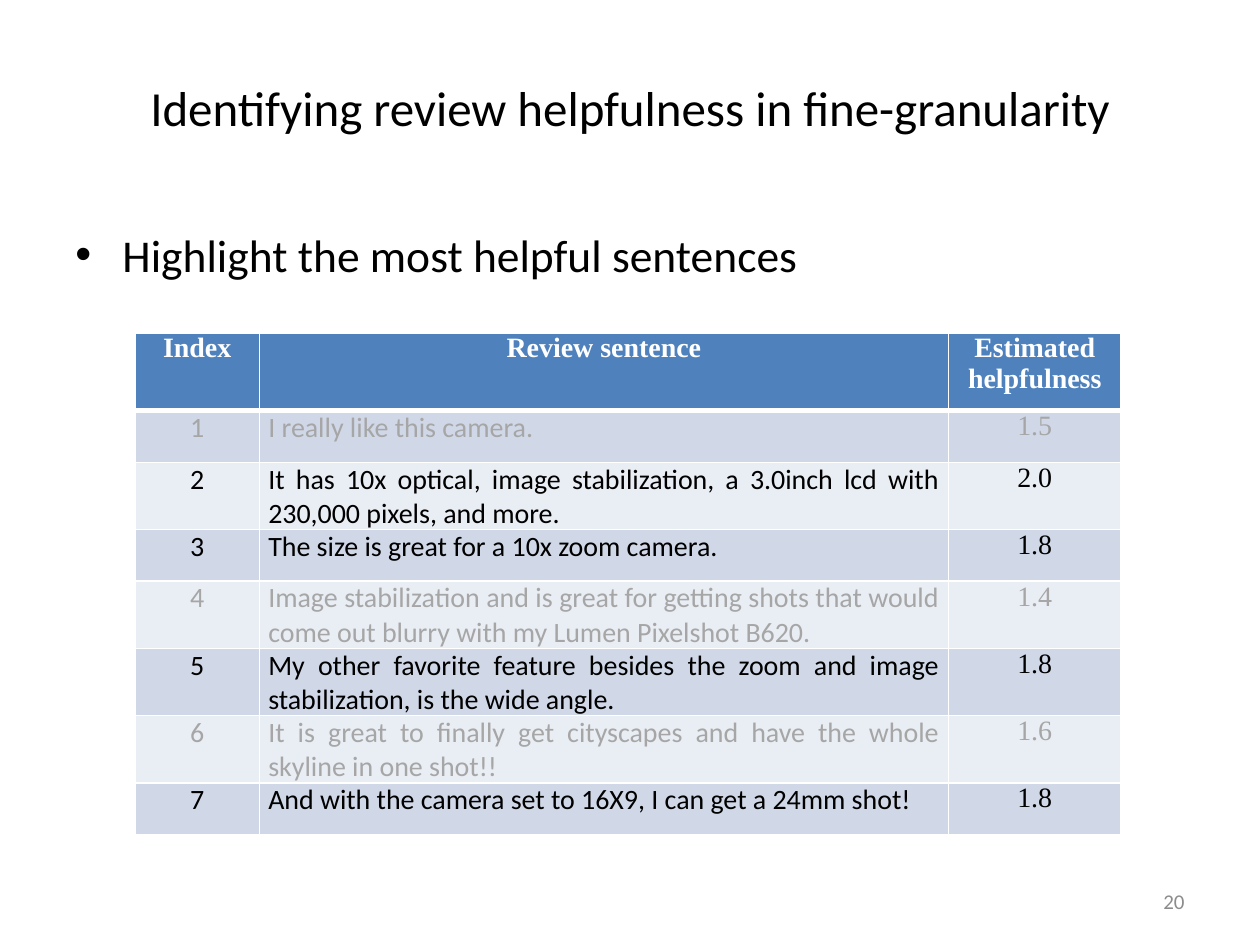
from lxml.etree import SubElement
from pptx import Presentation
from pptx.dml.color import RGBColor
from pptx.enum.text import MSO_ANCHOR, PP_ALIGN
from pptx.oxml.ns import qn
from pptx.util import Cm, Pt

# Content
TITLE = "Identifying review helpfulness in fine-granularity"
BULLET = "Highlight the most helpful sentences"
PAGE_NUMBER = "20"
HEADER = ("Index", "Review sentence", "Estimated helpfulness")
REVIEWS = [  # sentence, estimated helpfulness
    ("I really like this camera.", 1.5),
    ("It has 10x optical, image stabilization, a 3.0inch lcd with "
     "230,000 pixels, and more.", 2.0),
    ("The size is great for a 10x zoom camera.", 1.8),
    ("Image stabilization and is great for getting shots that would come out "
     "blurry with my Lumen Pixelshot B620.", 1.4),
    ("My other favorite feature besides the zoom and image stabilization, "
     "is the wide angle.", 1.8),
    ("It is great to finally get cityscapes and have the whole skyline "
     "in one shot!!", 1.6),
    ("And with the camera set to 16X9, I can get a 24mm shot!", 1.8),
]
HELPFUL_FROM = 1.8  # sentences below this score are dimmed

THEME = {
    "sans": "Calibri", "serif": "Times New Roman",
    "text": "000000", "dim": "A6A6A6", "page": "8C8C8C", "white": "FFFFFF",
    "header": "4F81BD", "bands": ("D0D8E8", "E9EDF4"),
    "title_size": 28, "bullet_size": 26, "table_size": 16, "page_size": 12,
    "thin": 1, "thick": 3,
}

# Geometry in centimetres
TABLE_LEFT, TABLE_TOP = 2.72, 6.71
COLUMN_WIDTHS = (2.51, 13.89, 3.48)
HEADER_HEIGHT, SHORT_ROW, TALL_ROW = 1.57, 1.04, 1.35
TALL_ROWS = {2, 4, 5, 6}


def write(text_frame, text, size, color, font=THEME["sans"],
          align=PP_ALIGN.LEFT, bold=False):
    text_frame.text = text
    paragraph = text_frame.paragraphs[0]
    paragraph.alignment = align
    style = paragraph.runs[0].font
    style.name, style.size, style.bold = font, Pt(size), bold
    style.color.rgb = RGBColor.from_string(color)
    return paragraph


def add_text(slide, box, text, size, color, align, anchor):
    text_frame = slide.shapes.add_textbox(*map(Cm, box)).text_frame
    text_frame.word_wrap = True
    text_frame.vertical_anchor = anchor
    return write(text_frame, text, size, color, align=align)


def add_bullet(paragraph, indent):
    paragraph.space_before = Pt(5.2)
    properties = paragraph._p.get_or_add_pPr()
    properties.set("marL", str(Cm(indent)))
    properties.set("indent", str(-Cm(indent)))
    SubElement(properties, qn("a:buFont"), typeface="Arial")
    SubElement(properties, qn("a:buChar"), char="•")


def set_borders(cell, top, bottom):
    properties = cell._tc.get_or_add_tcPr()
    thin = THEME["thin"]
    for side, width in (("L", thin), ("R", thin), ("T", top), ("B", bottom)):
        line = SubElement(properties, qn(f"a:ln{side}"), w=str(Pt(width)))
        fill = SubElement(line, qn("a:solidFill"))
        SubElement(fill, qn("a:srgbClr"), val=THEME["white"])


def fill_cell(cell, row, column, text, color):
    is_header = row == 0
    cell.margin_left = cell.margin_right = Cm(0.18)
    cell.margin_top = cell.margin_bottom = 0
    serif = is_header or column == 2
    justified = column == 1 and not is_header
    write(cell.text_frame, text, THEME["table_size"], color,
          THEME["serif"] if serif else THEME["sans"],
          PP_ALIGN.JUSTIFY if justified else PP_ALIGN.CENTER, is_header)
    set_borders(cell, THEME["thick"] if row == 1 else THEME["thin"],
                THEME["thick"] if is_header else THEME["thin"])
    background = THEME["header"] if is_header else THEME["bands"][(row - 1) % 2]
    cell.fill.solid()
    cell.fill.fore_color.rgb = RGBColor.from_string(background)


def add_review_table(slide):
    rows = [(HEADER, THEME["white"])]
    for index, (sentence, score) in enumerate(REVIEWS, 1):
        color = THEME["text"] if score >= HELPFUL_FROM else THEME["dim"]
        rows.append(((str(index), sentence, f"{score:.1f}"), color))
    heights = [HEADER_HEIGHT] + [TALL_ROW if row in TALL_ROWS else SHORT_ROW
                                 for row in range(1, len(rows))]
    table = slide.shapes.add_table(
        len(rows), len(HEADER), Cm(TABLE_LEFT), Cm(TABLE_TOP),
        Cm(sum(COLUMN_WIDTHS)), Cm(sum(heights))).table
    for column, width in zip(table.columns, COLUMN_WIDTHS):
        column.width = Cm(width)
    for row, ((texts, color), height) in enumerate(zip(rows, heights)):
        table.rows[row].height = Cm(height)
        for column, text in enumerate(texts):
            fill_cell(table.cell(row, column), row, column, text, color)


def main():
    presentation = Presentation()
    presentation.slide_width, presentation.slide_height = Cm(25.4), Cm(19.05)
    slide = presentation.slides.add_slide(presentation.slide_layouts[6])

    # Page number, title and bullet
    add_text(slide, (18.2, 17.66, 5.93, 1.01), PAGE_NUMBER, THEME["page_size"],
             THEME["page"], PP_ALIGN.RIGHT, MSO_ANCHOR.MIDDLE)
    add_text(slide, (1.27, 0.57, 22.86, 3.17), TITLE, THEME["title_size"],
             THEME["text"], PP_ALIGN.CENTER, MSO_ANCHOR.MIDDLE)
    bullet = add_text(slide, (1.27, 4.45, 22.86, 12.57), BULLET,
                      THEME["bullet_size"], THEME["text"],
                      PP_ALIGN.LEFT, MSO_ANCHOR.TOP)
    add_bullet(bullet, 0.95)

    # Review sentences
    add_review_table(slide)
    presentation.save("out.pptx")


if __name__ == "__main__":
    main()
